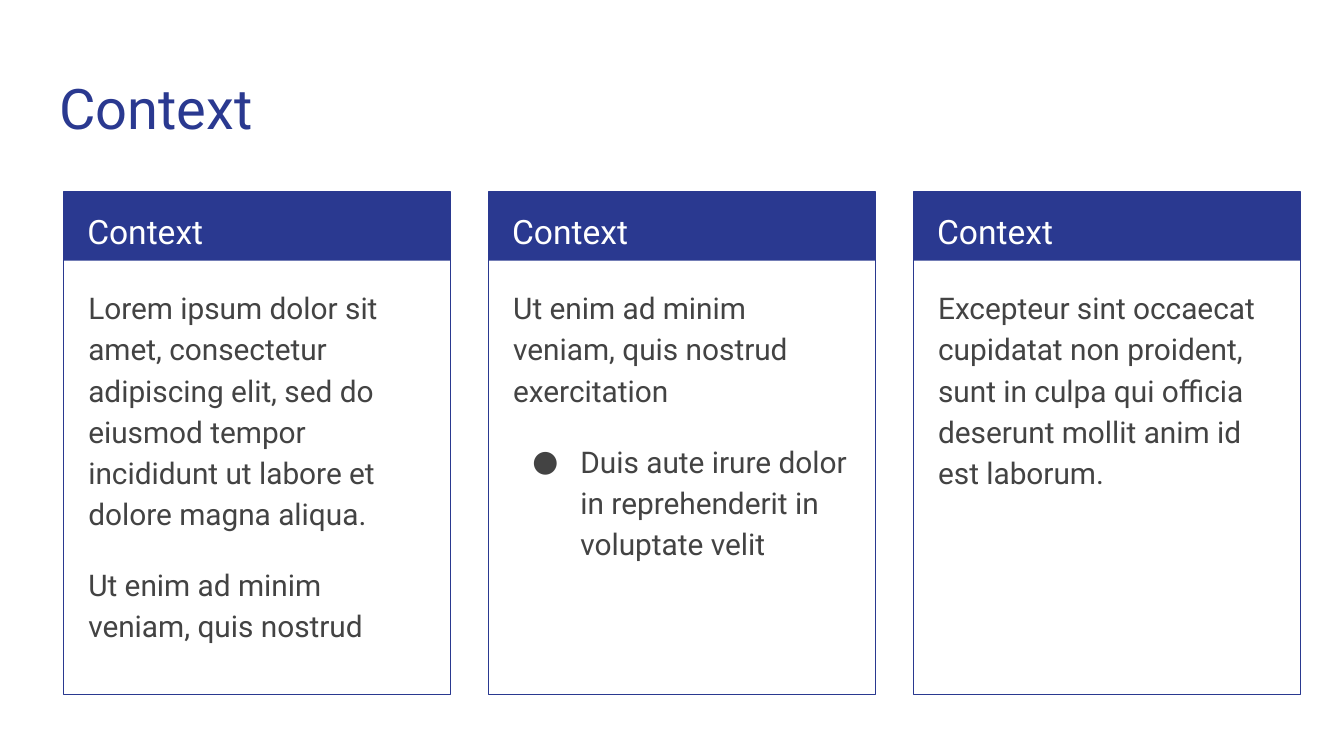
from lxml import etree
from pptx import Presentation
from pptx.dml.color import RGBColor
from pptx.enum.shapes import MSO_SHAPE as SHAPE
from pptx.enum.text import MSO_ANCHOR as ANCHOR
from pptx.oxml.ns import qn
from pptx.util import Cm, Pt

BLUE, GREY, WHITE = "2A3990", "434343", "FFFFFF"
LEFT, TOP, PITCH = 1.2, 3.63, 8.03
CARD_W, CARD_H, HEAD_H = 7.32, 9.5, 1.3

BULLET = {"bullet": "●", "space_before": Pt(16)}
CARDS = [
    ("Context", [
        ("Lorem ipsum dolor sit amet, consectetur adipiscing elit, sed do "
         "eiusmod tempor incididunt ut labore et dolore magna aliqua.", {}),
        ("Ut enim ad minim veniam, quis nostrud",
         {"space_before": Pt(16), "space_after": Pt(16)}),
    ]),
    ("Context", [
        ("Ut enim ad minim veniam, quis nostrud exercitation", {}),
        ("Duis aute irure dolor in reprehenderit in voluptate velit", BULLET),
    ]),
    ("Context", [
        ("Excepteur sint occaecat cupidatat non proident, sunt in culpa qui "
         "officia deserunt mollit anim id est laborum.",
         {"space_after": Pt(16)}),
    ]),
]


def rgb(value):
    return RGBColor.from_string(value)


def set_all(target, values):
    for name, value in values.items():
        setattr(target, name, value)


class Deck:
    def __init__(self, slide, font="Roboto"):
        self.s, self.font = slide, font

    def box(self, x, y, w, h, fill=None, line=None):
        sp = self.s.shapes.add_shape(
            SHAPE.RECTANGLE, Cm(x), Cm(y), Cm(w), Cm(h))
        sp.shadow.inherit = False
        if fill:
            sp.fill.solid()
            sp.fill.fore_color.rgb = rgb(fill)
        else:
            sp.fill.background()
        if line:
            sp.line.color.rgb = rgb(line)
            sp.line.width = Pt(0.75)
        else:
            sp.line.fill.background()

    def text(self, x, y, w, h, paragraphs, size, color, spacing=1.15):
        """Add a text box from (text, paragraph format) pairs."""
        tf = self.s.shapes.add_textbox(Cm(x), Cm(y), Cm(w), Cm(h)).text_frame
        margins = ("left", "right", "top", "bottom")
        set_all(tf, {f"margin_{side}": Cm(0.25) for side in margins})
        set_all(tf, {"word_wrap": True, "vertical_anchor": ANCHOR.TOP})
        for i, (words, form) in enumerate(paragraphs):
            p = tf.add_paragraph() if i else tf.paragraphs[0]
            form = {"line_spacing": spacing, **form}
            bullet = form.pop("bullet", None)
            set_all(p, form)
            if bullet:
                self.bullet(p, bullet, color)
            r = p.add_run()
            r.text = words
            set_all(r.font, {"name": self.font, "size": Pt(size)})
            r.font.color.rgb = rgb(color)

    def bullet(self, p, char, color):
        pPr = p._p.get_or_add_pPr()
        pPr.set("marL", str(Cm(1.27)))
        pPr.set("indent", str(Cm(-0.91)))
        clr = etree.SubElement(pPr, qn("a:buClr"))
        etree.SubElement(clr, qn("a:srgbClr"), val=color)
        etree.SubElement(pPr, qn("a:buFont"), typeface=self.font)
        etree.SubElement(pPr, qn("a:buChar"), char=char)

    def card(self, x, heading, paragraphs):
        self.box(x, TOP, CARD_W, HEAD_H, fill=BLUE)
        self.box(x, TOP, CARD_W, CARD_H, line=BLUE)
        self.text(x + 0.2, TOP, 6.93, 1.27, [(heading, {})], 18, WHITE)
        self.text(x + 0.22, TOP + 1.5, 6.88, 7.77, paragraphs, 16, GREY)


def main():
    prs = Presentation()
    set_all(prs, {"slide_width": Cm(25.4), "slide_height": Cm(14.29)})
    deck = Deck(prs.slides.add_slide(prs.slide_layouts[6]))
    deck.text(0.87, 1.14, 23.67, 1.68, [("Context", {})], 30, BLUE, 1.0)
    for i, (heading, paragraphs) in enumerate(CARDS):
        deck.card(LEFT + i * PITCH, heading, paragraphs)
    prs.save("out.pptx")


if __name__ == "__main__":
    main()
